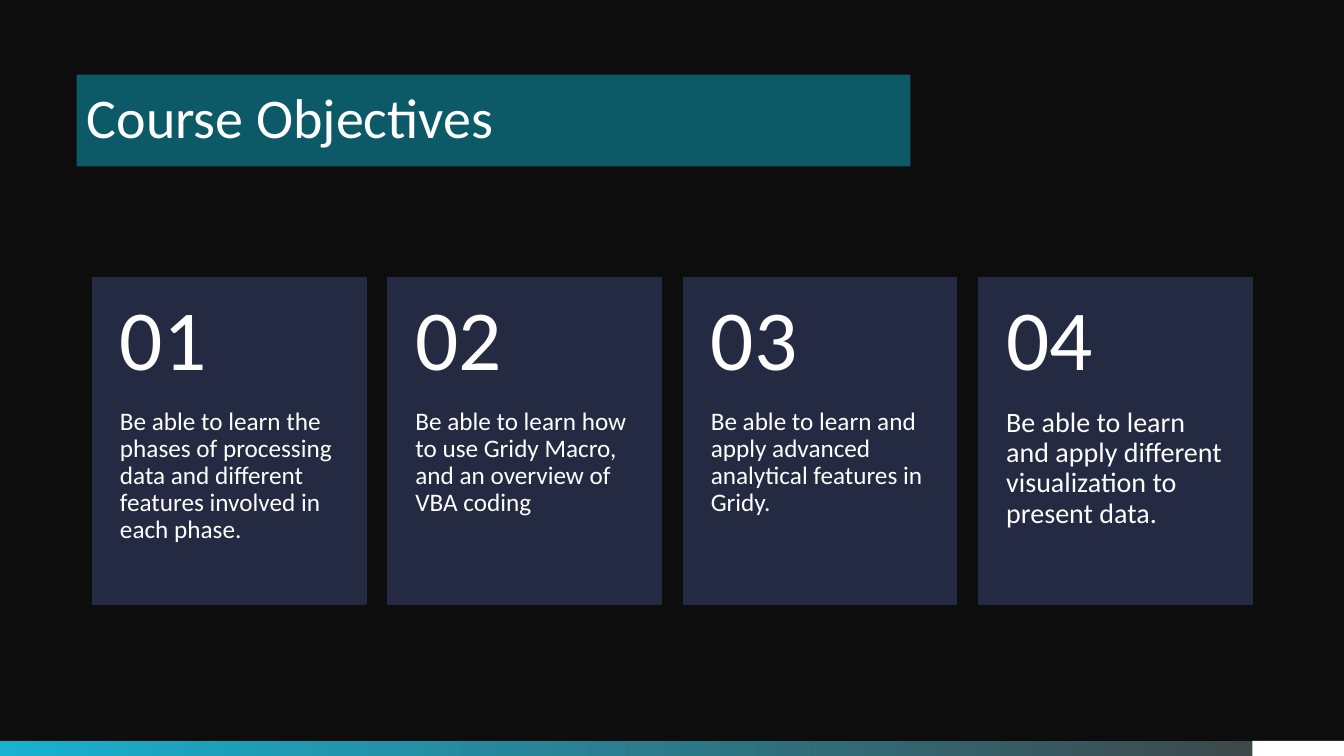
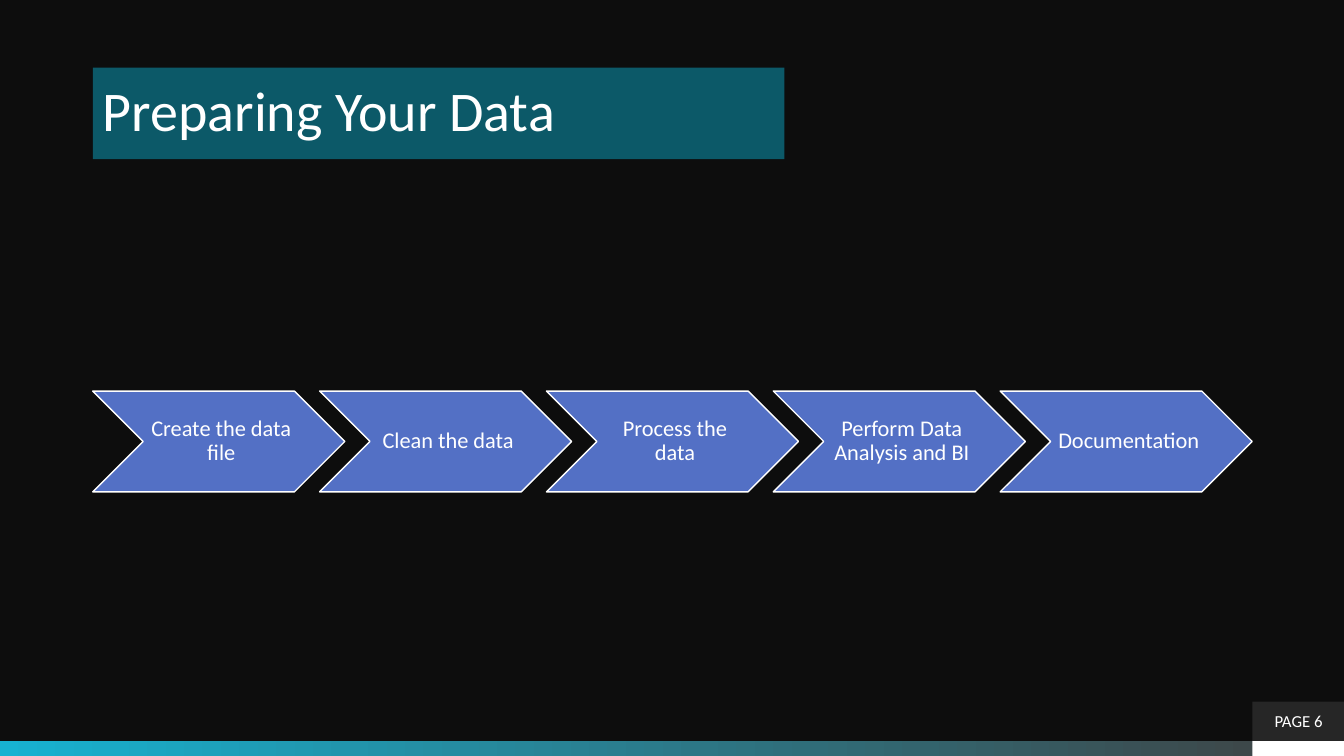
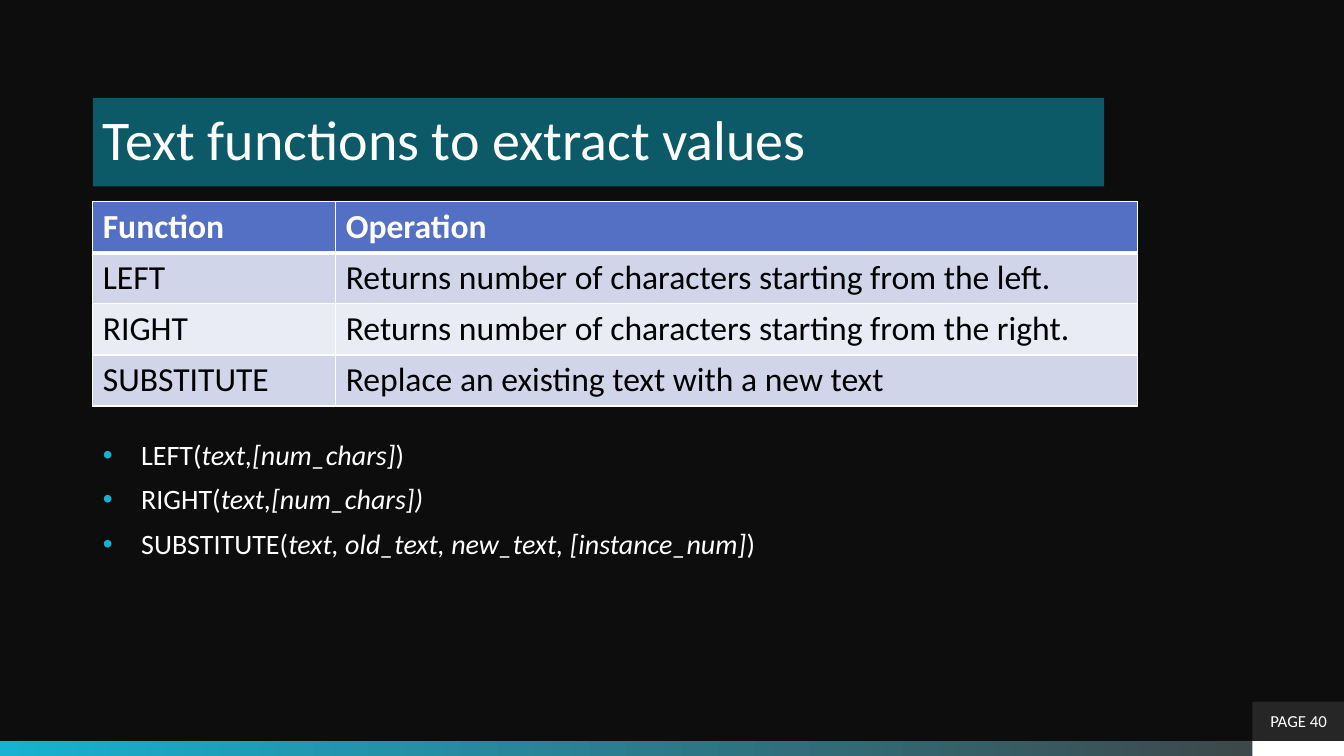
import pptx
import pptx.dml.color
import pptx.enum.shapes
import pptx.enum.text
import pptx.oxml
import pptx.oxml.ns
import pptx.util
from lxml import etree

Inches, Pt = pptx.util.Inches, pptx.util.Pt
RGBColor = pptx.dml.color.RGBColor
MSO_SHAPE = pptx.enum.shapes.MSO_SHAPE
MSO_ANCHOR = pptx.enum.text.MSO_ANCHOR
PP_ALIGN = pptx.enum.text.PP_ALIGN
qn = pptx.oxml.ns.qn

FONT = "Calibri"
BLACK = RGBColor(0x00, 0x00, 0x00)
WHITE = RGBColor(0xFF, 0xFF, 0xFF)
BACKGROUND = RGBColor(0x0D, 0x0D, 0x0D)
TEAL = RGBColor(0x0C, 0x59, 0x68)
CYAN = RGBColor(0x17, 0xB2, 0xD1)
GRAY = RGBColor(0x40, 0x40, 0x40)
PAGE_GRAY = RGBColor(0x26, 0x26, 0x26)
NAVY = RGBColor(0x24, 0x2A, 0x41)
BLUE = RGBColor(0x53, 0x70, 0xC5)
ROW_FILLS = (RGBColor(0xD1, 0xD5, 0xEA), RGBColor(0xE9, 0xEB, 0xF5))

SLIDE_WIDTH, SLIDE_HEIGHT = 13.33, 7.5
MARGIN = 0.92
CONTENT_WIDTH = 11.5
BAND_TOP, BAND_HEIGHT = 7.35, 0.15
CORNER_LEFT, CORNER_WIDTH = 12.42, 0.92
TITLE_ONLY, TITLE_AND_CONTENT = 5, 1

OBJECTIVES = [
    ("Be able to learn the phases of processing data and different features "
     "involved in each phase.", 18),
    ("Be able to learn how to use Gridy Macro, and an overview of VBA coding", 18),
    ("Be able to learn and apply advanced analytical features in Gridy.", 18),
    ("Be able to learn and apply different visualization to present data.", 20),
]
STEPS = ["Create the data file", "Clean the data", "Process the data",
         "Perform Data Analysis and BI", "Documentation"]
FUNCTION_ROWS = [
    ("Function", "Operation"),
    ("LEFT", "Returns number of characters starting from the left."),
    ("RIGHT", "Returns number of characters starting from the right."),
    ("SUBSTITUTE", "Replace an existing text with a new text"),
]
# Each signature is a list of (text, italic) runs.
SIGNATURES = [
    [("LEFT(", False), ("text,[num_chars]", True), (")", False)],
    [("RIGHT(", False), ("text,[num_chars])", True)],
    [("SUBSTITUTE(", False), ("text, old_text, new_text, [instance_num]", True),
     (")", False)],
]


def set_font(paragraph, size, color=WHITE, bold=False):
    font = paragraph.font
    font.name, font.size, font.bold = FONT, Pt(size), bold
    font.color.rgb = color


def set_text(shape, text, size, insets=(0.1, 0.05, 0.1, 0.05),
             anchor=MSO_ANCHOR.MIDDLE, align=PP_ALIGN.LEFT, line_spacing=0.9):
    """Fill a shape with one paragraph; insets are left, top, right, bottom."""
    frame = shape.text_frame
    frame.word_wrap = True
    frame.auto_size = pptx.enum.text.MSO_AUTO_SIZE.NONE
    frame.vertical_anchor = anchor
    (frame.margin_left, frame.margin_top,
     frame.margin_right, frame.margin_bottom) = map(Inches, insets)
    paragraph = frame.paragraphs[0]
    paragraph.text = text
    paragraph.alignment = align
    paragraph.line_spacing = line_spacing
    set_font(paragraph, size)


def add_box(slide, position, fill, line=None, kind=MSO_SHAPE.RECTANGLE):
    shape = slide.shapes.add_shape(kind, *map(Inches, position))
    shape.shadow.inherit = False
    shape.fill.solid()
    shape.fill.fore_color.rgb = fill
    if line is None:
        shape.line.fill.background()
    else:
        shape.line.color.rgb = line
        shape.line.width = Pt(1)
    return shape


def place(shape, position):
    shape.left, shape.top, shape.width, shape.height = map(Inches, position)


def add_slide(presentation, layout, title, position, page=None):
    slide = presentation.slides.add_slide(presentation.slide_layouts[layout])
    title_shape = slide.shapes.title
    place(title_shape, position)
    title_shape.fill.solid()
    title_shape.fill.fore_color.rgb = TEAL
    set_text(title_shape, title, 40, (0.1, 0.12, 0.1, 0.12))
    if page:
        tag = add_box(slide, (CORNER_LEFT, 6.96, CORNER_WIDTH, 0.39), PAGE_GRAY)
        set_text(tag, page, 12, align=PP_ALIGN.CENTER, line_spacing=1.0)
    return slide


def style_master(presentation, slide):
    """Set the background and move the bottom bands, drawn on slide, to the master."""
    master = presentation.slide_master
    master.background.fill.solid()
    master.background.fill.fore_color.rgb = BACKGROUND
    band = add_box(slide, (0, BAND_TOP, SLIDE_WIDTH, BAND_HEIGHT), CYAN)
    band.fill.gradient()
    band.fill.gradient_angle = 0
    for stop, color in zip(band.fill.gradient_stops, (CYAN, GRAY)):
        stop.color.rgb = color
    corner = add_box(slide, (CORNER_LEFT, BAND_TOP, CORNER_WIDTH, BAND_HEIGHT), WHITE)
    for number, shape in enumerate((band, corner), start=20):
        shape.element.nvSpPr.cNvPr.id = number
        master.shapes.element.append(shape.element)


def add_objectives(slide):
    top, width, height, number_height = 2.75, 2.71, 3.25, 1.3
    step = (CONTENT_WIDTH - width) / (len(OBJECTIVES) - 1)
    for index, (text, size) in enumerate(OBJECTIVES):
        left = round(MARGIN + index * step, 2)
        add_box(slide, (left, top, width, height), NAVY, NAVY)
        description = slide.shapes.add_textbox(*map(Inches, (
            left, top + number_height, width, height - number_height)))
        set_text(description, text, size, (0.27, 0, 0.27, 0.36), MSO_ANCHOR.TOP)
        number = slide.shapes.add_textbox(
            *map(Inches, (left, top, width, number_height)))
        set_text(number, f"{index + 1:02}", 61, (0.27, 0.18, 0.27, 0.18))


def add_steps(slide):
    width = 2.5
    step = (CONTENT_WIDTH - width) / (len(STEPS) - 1)
    for index, text in enumerate(STEPS):
        chevron = add_box(slide, (MARGIN + index * step, 3.88, width, 1),
                          BLUE, WHITE, MSO_SHAPE.CHEVRON)
        set_text(chevron, text, 16, (0.07, 0.02, 0.02, 0.02), align=PP_ALIGN.CENTER)


def set_borders(cell, **widths):
    """Draw white borders, with widths in points for L, R, T and B."""
    properties = cell._tc.get_or_add_tcPr()
    for side in "LRTB":
        line = etree.SubElement(properties, qn(f"a:ln{side}"),
                                w=str(Pt(widths.get(side, 1))))
        fill = etree.SubElement(line, qn("a:solidFill"))
        etree.SubElement(fill, qn("a:srgbClr"), val=str(WHITE))


def add_function_table(slide):
    column_widths, row_height = (2.41, 7.95), 0.5
    table = slide.shapes.add_table(
        len(FUNCTION_ROWS), len(column_widths), Inches(MARGIN), Inches(2),
        Inches(sum(column_widths)), Inches(row_height * len(FUNCTION_ROWS))).table
    for column, width in zip(table.columns, column_widths):
        column.width = Inches(width)
    for row_index, row in enumerate(FUNCTION_ROWS):
        header = row_index == 0
        borders = {0: {"B": 3}, 1: {"T": 3}}.get(row_index, {})
        for column_index, text in enumerate(row):
            cell = table.cell(row_index, column_index)
            set_borders(cell, **borders)
            cell.fill.solid()
            cell.fill.fore_color.rgb = BLUE if header else ROW_FILLS[(row_index - 1) % 2]
            cell.text = text
            set_font(cell.text_frame.paragraphs[0], 24,
                     WHITE if header else BLACK, header)


def add_bullet(paragraph):
    properties = paragraph._p.get_or_add_pPr()
    properties.set("marL", str(Inches(0.38)))
    properties.set("indent", str(Inches(-0.38)))
    color = etree.SubElement(properties, qn("a:buClr"))
    etree.SubElement(color, qn("a:srgbClr"), val=str(CYAN))
    etree.SubElement(properties, qn("a:buFont"), typeface="Arial")
    etree.SubElement(properties, qn("a:buChar"), char="•")


def fill_signatures(body):
    place(body, (MARGIN, 4.33, 11.68, 2.43))
    frame = body.text_frame
    frame.auto_size = pptx.enum.text.MSO_AUTO_SIZE.NONE
    for index, runs in enumerate(SIGNATURES):
        paragraph = frame.add_paragraph() if index else frame.paragraphs[0]
        add_bullet(paragraph)
        paragraph.line_spacing = 0.9
        paragraph.space_before = Pt(10 if index else 0)
        set_font(paragraph, 20)
        for text, italic in runs:
            run = paragraph.add_run()
            run.text = text
            run.font.italic = italic


def main():
    presentation = pptx.Presentation()
    presentation.slide_width = Inches(SLIDE_WIDTH)
    presentation.slide_height = Inches(SLIDE_HEIGHT)

    objectives = add_slide(presentation, TITLE_ONLY, "Course Objectives",
                           (0.76, 0.74, 8.27, 0.91))
    style_master(presentation, objectives)
    add_objectives(objectives)

    preparing = add_slide(presentation, TITLE_ONLY, "Preparing Your Data",
                          (MARGIN, 0.67, 6.86, 0.91), "PAGE 6")
    add_steps(preparing)

    functions = add_slide(presentation, TITLE_AND_CONTENT,
                          "Text functions to extract values",
                          (MARGIN, 0.97, 10.03, 0.88), "PAGE 40")
    fill_signatures(functions.placeholders[1])
    add_function_table(functions)

    presentation.save("out.pptx")


if __name__ == "__main__":
    main()
